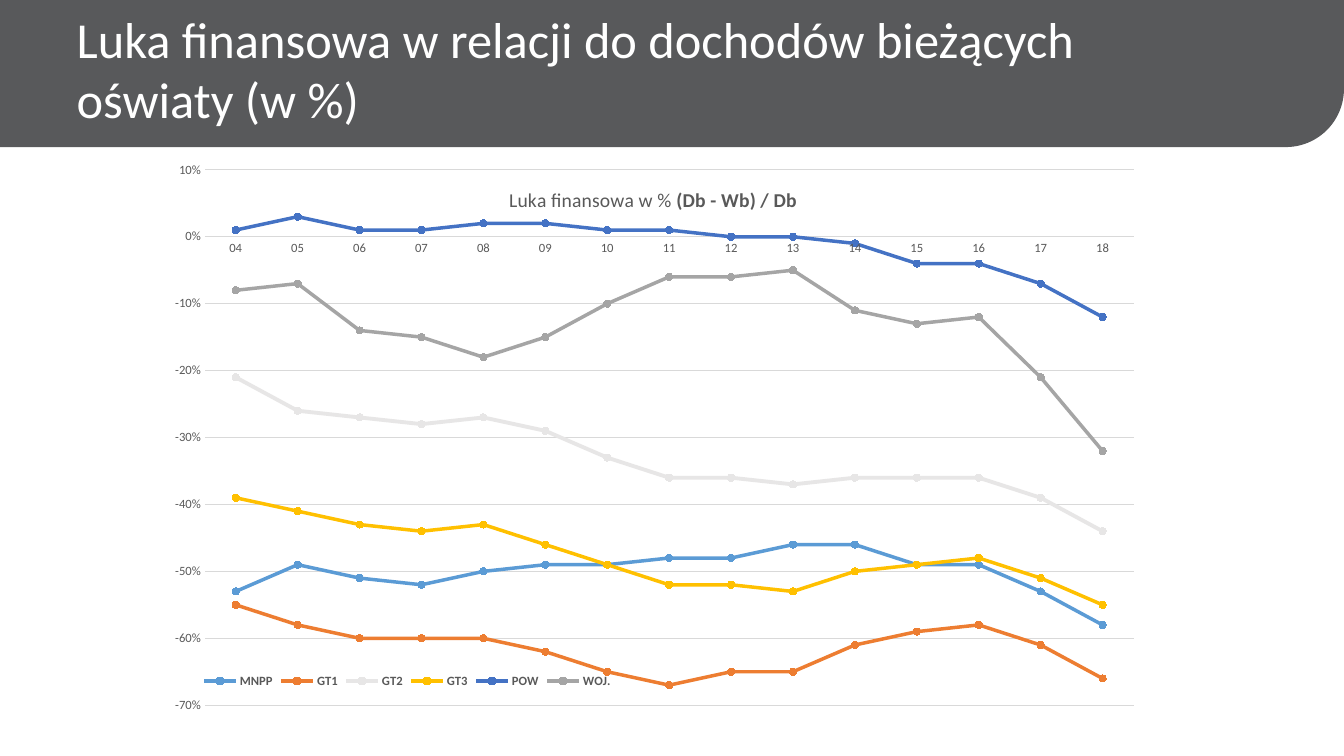
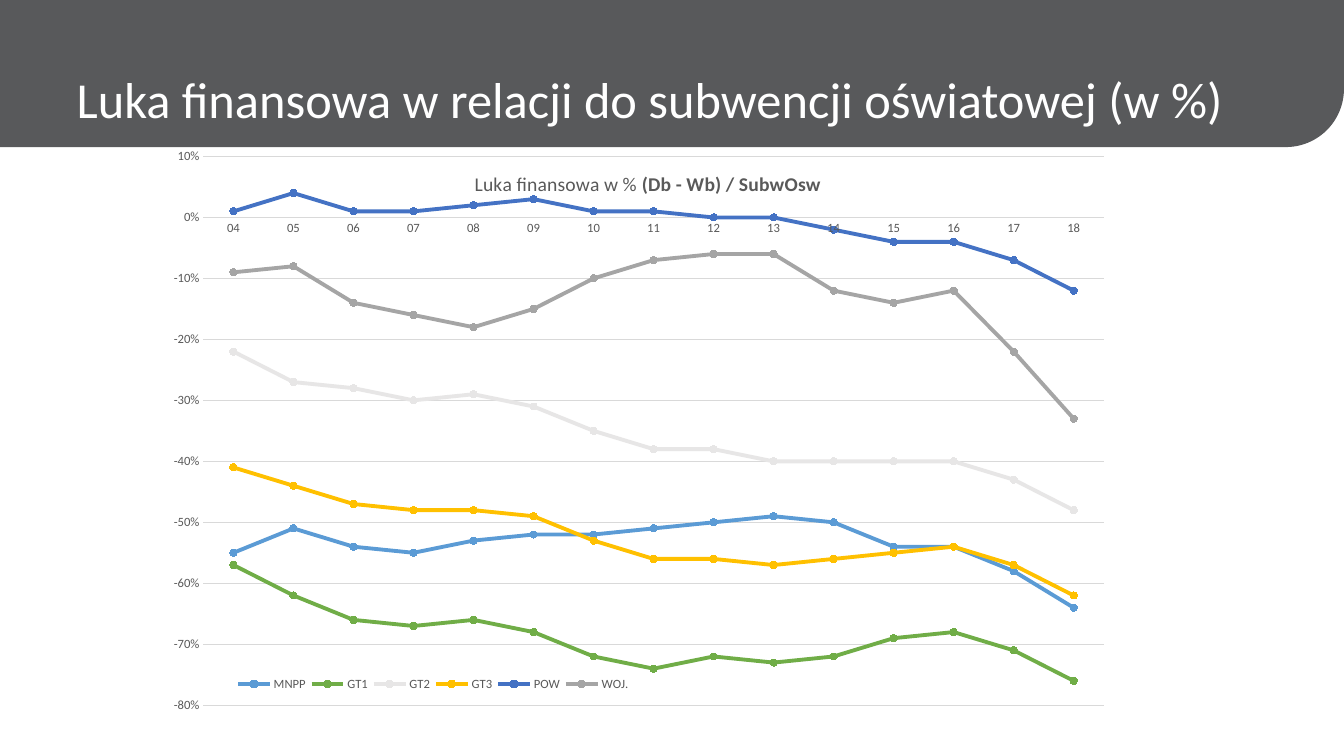
import pptx
import pptx.chart.data
import pptx.dml.color
import pptx.enum.chart
import pptx.enum.shapes
import pptx.enum.text
import pptx.oxml
import pptx.oxml.ns
import pptx.util
from dataclasses import dataclass, field

Inches = pptx.util.Inches
Pt = pptx.util.Pt


@dataclass(frozen=True)
class Theme:
    """Colours, typeface and type sizes shared by the slides."""
    font: str = "Calibri"
    band: str = "58595B"
    title: str = "FFFFFF"
    label: str = "595959"
    grid: str = "D9D9D9"
    title_size: float = 36
    chart_title_size: float = 14
    label_size: float = 9
    marker_size: int = 5
    units: dict = field(default_factory=lambda: {
        "MNPP": "5B9BD5", "GT1": "ED7D31", "GT2": "E7E6E6",
        "GT3": "FFC000", "POW": "4472C4", "WOJ.": "A5A5A5"})


THEME = Theme()
YEARS = [f"{year:02d}" for year in range(4, 19)]

GAPS = [
    {
        "title": "Luka finansowa w relacji do dochodów bieżących oświaty (w %)",
        "formula": "(Db - Wb) / Db",
        "frame": (1.59, 1.57, 9.8, 5.5),
        "plot": (0.045, 0.021, 0.94, 0.968),
        "heading": (0.35, 0.045),
        "legend": (0.04, 0.92, 0.42, 0.05),
        "legend_bold": True,
        "lowest": -0.7,
        "line_width": 2.5,
        "recolour": {},
        "percents": {
            "MNPP": [-53, -49, -51, -52, -50, -49, -49, -48, -48, -46, -46, -49, -49, -53, -58],
            "GT1": [-55, -58, -60, -60, -60, -62, -65, -67, -65, -65, -61, -59, -58, -61, -66],
            "GT2": [-21, -26, -27, -28, -27, -29, -33, -36, -36, -37, -36, -36, -36, -39, -44],
            "GT3": [-39, -41, -43, -44, -43, -46, -49, -52, -52, -53, -50, -49, -48, -51, -55],
            "POW": [1, 3, 1, 1, 2, 2, 1, 1, 0, 0, -1, -4, -4, -7, -12],
            "WOJ.": [-8, -7, -14, -15, -18, -15, -10, -6, -6, -5, -11, -13, -12, -21, -32],
        },
    },
    {
        "title": "Luka finansowa w relacji do subwencji oświatowej (w %)",
        "formula": "(Db - Wb) / SubwOsw",
        "frame": (1.59, 1.48, 9.5, 5.59),
        "plot": (0.045, 0.011, 0.94, 0.977),
        "heading": (0.325, 0.03),
        "legend": (0.075, 0.925, 0.42, 0.05),
        "legend_bold": False,
        "lowest": -0.8,
        "line_width": 2.75,
        "recolour": {"GT1": "70AD47"},
        "percents": {
            "MNPP": [-55, -51, -54, -55, -53, -52, -52, -51, -50, -49, -50, -54, -54, -58, -64],
            "GT1": [-57, -62, -66, -67, -66, -68, -72, -74, -72, -73, -72, -69, -68, -71, -76],
            "GT2": [-22, -27, -28, -30, -29, -31, -35, -38, -38, -40, -40, -40, -40, -43, -48],
            "GT3": [-41, -44, -47, -48, -48, -49, -53, -56, -56, -57, -56, -55, -54, -57, -62],
            "POW": [1, 4, 1, 1, 2, 3, 1, 1, 0, 0, -2, -4, -4, -7, -12],
            "WOJ.": [-9, -8, -14, -16, -18, -15, -10, -7, -6, -6, -12, -14, -12, -22, -33],
        },
    },
]


def rgb(code):
    """Turn a hex code into a colour."""
    return pptx.dml.color.RGBColor.from_string(code)


def style_font(font, size, colour, bold=False):
    """Apply the theme typeface with a size, colour and weight."""
    font.name = THEME.font
    font.size = Pt(size)
    font.bold = bold
    font.color.rgb = rgb(colour)


def style_line(line, colour, width):
    """Colour a line and set its width."""
    line.color.rgb = rgb(colour)
    line.width = Pt(width)


def add_band(slide, layout):
    """Draw the title band and hand it over to the layout."""
    band = slide.shapes.add_shape(
        pptx.enum.shapes.MSO_SHAPE.ROUND_1_RECTANGLE,
        0, 0, Inches(13.33), Inches(1.46))
    band.adjustments[0] = 0.395
    band.shadow.inherit = False
    band.fill.solid()
    band.fill.fore_color.rgb = rgb(THEME.band)
    band.line.fill.background()
    band.element.spPr.get_or_add_xfrm().set("flipV", "1")
    layout.element.cSld.spTree.insert(2, band.element)


def fill_title(slide, wording):
    """Place the slide title at the bottom of the band."""
    title = slide.shapes.title
    title.left, title.top = Inches(0.66), Inches(0)
    title.width, title.height = Inches(11.76), Inches(1.28)
    frame = title.text_frame
    frame.word_wrap = True
    frame.auto_size = pptx.enum.text.MSO_AUTO_SIZE.NONE
    frame.vertical_anchor = pptx.enum.text.MSO_ANCHOR.BOTTOM
    frame.margin_left = frame.margin_right = Inches(0.1)
    frame.margin_top = frame.margin_bottom = 0
    paragraph = frame.paragraphs[0]
    paragraph.alignment = pptx.enum.text.PP_ALIGN.LEFT
    run = paragraph.add_run()
    run.text = wording
    style_font(run.font, THEME.title_size, THEME.title)


def set_layout(part, fractions, inner=False):
    """Fix a chart part at fractions of the chart frame."""
    settings = [("layoutTarget", "inner")] if inner else []
    settings += [("xMode", "edge"), ("yMode", "edge")]
    settings += zip("xywh", fractions)
    children = "".join(f'<c:{tag} val="{value}"/>' for tag, value in settings)
    layout = pptx.oxml.parse_xml(
        f'<c:layout {pptx.oxml.ns.nsdecls("c")}>'
        f'<c:manualLayout>{children}</c:manualLayout></c:layout>')
    for previous in part.xpath("c:layout"):
        part.remove(previous)
    overlay = part.xpath("c:overlay")
    if overlay:
        overlay[0].addprevious(layout)
    else:
        part.insert(0, layout)


def style_axes(chart, lowest):
    """Format the year axis and the percentage axis."""
    years, shares = chart.category_axis, chart.value_axis
    for axis in (years, shares):
        axis.major_tick_mark = pptx.enum.chart.XL_TICK_MARK.NONE
        axis.minor_tick_mark = pptx.enum.chart.XL_TICK_MARK.NONE
        style_font(axis.tick_labels.font, THEME.label_size, THEME.label)
    style_line(years.format.line, THEME.grid, 0.75)
    shares.format.line.fill.background()
    shares.minimum_scale, shares.maximum_scale = lowest, 0.1
    shares.major_unit = 0.1
    shares.tick_labels.number_format = "0%"
    shares.tick_labels.number_format_is_linked = False
    shares.has_major_gridlines = True
    style_line(shares.major_gridlines.format.line, THEME.grid, 0.75)


def style_series(chart, gap):
    """Give every unit its line colour and round markers."""
    colours = {**THEME.units, **gap["recolour"]}
    for unit in chart.plots[0].series:
        colour = colours[unit.name]
        unit.smooth = False
        width = 2.75 if unit.name == "GT2" else gap["line_width"]
        style_line(unit.format.line, colour, width)
        marker = unit.marker
        marker.style = pptx.enum.chart.XL_MARKER_STYLE.CIRCLE
        marker.size = THEME.marker_size
        marker.format.fill.solid()
        marker.format.fill.fore_color.rgb = rgb(colour)
        style_line(marker.format.line, colour, 0.75)


def add_heading(chart, gap):
    """Write the chart title with its formula in bold."""
    chart.has_title = True
    paragraph = chart.chart_title.text_frame.paragraphs[0]
    for wording, bold in (("Luka finansowa w % ", False), (gap["formula"], True)):
        run = paragraph.add_run()
        run.text = wording
        style_font(run.font, THEME.chart_title_size, THEME.label, bold)
    heading = chart.element.xpath("c:chart/c:title")[0]
    set_layout(heading, gap["heading"])
    heading.xpath("c:overlay")[0].set("val", "1")


def add_legend(chart, gap):
    """Put the legend inside the plot, above the lowest gridline."""
    chart.has_legend = True
    legend = chart.legend
    legend.position = pptx.enum.chart.XL_LEGEND_POSITION.BOTTOM
    legend.include_in_layout = True
    style_font(legend.font, THEME.label_size, THEME.label, gap["legend_bold"])
    set_layout(chart.element.xpath("c:chart/c:legend")[0], gap["legend"])


def add_gap_chart(slide, gap):
    """Add the line chart of the financial gap."""
    data = pptx.chart.data.CategoryChartData(number_format="0%")
    data.categories = YEARS
    for unit, percents in gap["percents"].items():
        data.add_series(unit, [percent / 100 for percent in percents])
    chart = slide.shapes.add_chart(
        pptx.enum.chart.XL_CHART_TYPE.LINE_MARKERS,
        *map(Inches, gap["frame"]), data).chart
    style_font(chart.font, 10, "000000")
    chart.plots[0].vary_by_categories = False
    style_axes(chart, gap["lowest"])
    style_series(chart, gap)
    add_heading(chart, gap)
    add_legend(chart, gap)
    set_layout(chart.element.xpath("c:chart/c:plotArea")[0], gap["plot"], inner=True)


def main():
    """Build the slides and save the presentation."""
    deck = pptx.Presentation()
    deck.slide_width, deck.slide_height = Inches(13.33), Inches(7.5)
    title_only = deck.slide_layouts[5]
    slides = [deck.slides.add_slide(title_only) for _ in GAPS]
    add_band(slides[0], title_only)
    for slide, gap in zip(slides, GAPS):
        fill_title(slide, gap["title"])
        add_gap_chart(slide, gap)
    deck.save("out.pptx")


if __name__ == "__main__":
    main()
